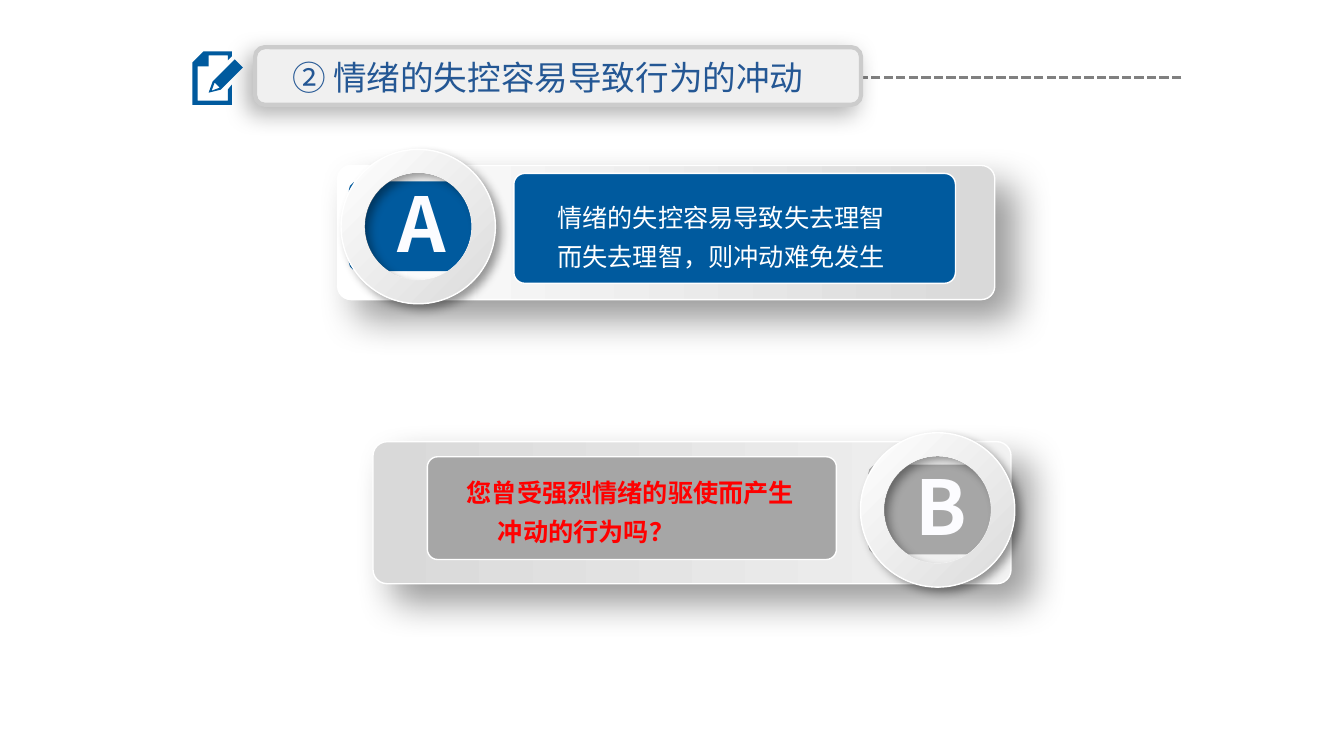
from lxml.etree import SubElement
from pptx import Presentation
from pptx.dml.color import RGBColor
from pptx.enum.dml import MSO_LINE
from pptx.enum.shapes import MSO_CONNECTOR, MSO_SHAPE as SHAPE
from pptx.enum.text import MSO_ANCHOR, MSO_AUTO_SIZE, PP_ALIGN as ALIGN
from pptx.oxml.ns import qn
from pptx.util import Cm, Pt

FONT = "Noto Sans CJK SC"
BLUE, GREY, WHITE = "005A9E", "A6A6A6", "FFFFFF"
HEADER_SHADOW, PANEL_SHADOW, RING_SHADOW = (30, 16, 7, 135), (40, 27, 19, 45), (40, 7, 5, 45)
RING, HOLE = 3.89, 2.72
UNIT = Cm(0.0254)


def rgb(value):
    return RGBColor.from_string(value)


class Deck:
    """Hold the slide and draw its styled elements, with lengths in centimetres."""

    def __init__(self, prs):
        self.s = prs.slides.add_slide(prs.slide_layouts[5])
        self.shapes = self.s.shapes

    def style(self, sp, fill=None, line=None, width=1, shadow=None, angle=0):
        if fill is None:
            sp.fill.background()
        elif isinstance(fill, str):
            sp.fill.solid()
            sp.fill.fore_color.rgb = rgb(fill)
        else:
            sp.fill.gradient()
            sp.fill.gradient_angle = (360 - angle) % 360
            for stop, color in zip(sp.fill.gradient_stops, fill):
                stop.color.rgb = rgb(color)
        if line:
            sp.line.color.rgb = rgb(line)
            sp.line.width = Pt(width)
        else:
            sp.line.fill.background()
        sp.shadow.inherit = False
        if shadow:
            alpha, blur, dist, direction = shadow
            effects = sp._element.spPr.find(qn("a:effectLst"))
            outer = SubElement(effects, qn("a:outerShdw"), blurRad=str(Pt(blur)), dist=str(Pt(dist)),
                               dir=str(direction * 60000), algn="ctr", rotWithShape="0")
            color = SubElement(outer, qn("a:srgbClr"), val="000000")
            SubElement(color, qn("a:alpha"), val=str(alpha * 1000))

    def shape(self, kind, box, adj=None, **style):
        sp = self.shapes.add_shape(kind, *map(Cm, box))
        if adj is not None:
            sp.adjustments[0] = adj
        self.style(sp, **style)

    def circle(self, kind, cx, cy, size, **style):
        self.shape(kind, (cx - size / 2, cy - size / 2, size, size), **style)

    def dashes(self, x1, x2, y):
        line = self.shapes.add_connector(MSO_CONNECTOR.STRAIGHT, Cm(x1), Cm(y), Cm(x2), Cm(y))
        line.line.color.rgb = rgb("808080")
        line.line.width = Pt(2.25)
        line.line.dash_style = MSO_LINE.SQUARE_DOT
        SubElement(line._element.spPr, qn("a:effectLst"))

    def outline(self, *contours):
        start = contours[0][0]
        builder = self.shapes.build_freeform(*start, scale=UNIT)
        for i, points in enumerate(contours):
            if i:
                builder.move_to(*points[0])
            builder.add_line_segments(points[1:], close=True)
        self.style(builder.convert_to_shape(), fill=BLUE)

    def set_text(self, sp, lines, size, color, bold=False, align=ALIGN.LEFT, wrap=True,
                 spacing=1.0, before=0, hanging=0, inset=0.18):
        tf = sp.text_frame
        tf.word_wrap = wrap
        tf.auto_size = MSO_AUTO_SIZE.NONE
        tf.vertical_anchor = MSO_ANCHOR.TOP
        tf.margin_left = tf.margin_right = Cm(inset)
        tf.margin_top = tf.margin_bottom = Cm(inset / 2)
        for i, line in enumerate(lines):
            p = tf.add_paragraph() if i else tf.paragraphs[0]
            p.text = line
            p.alignment = align
            p.line_spacing = spacing
            p.space_before = Pt(before)
            p.font.name, p.font.size, p.font.bold = FONT, Pt(size), bold
            p.font.color.rgb = rgb(color)
            pPr = p._p.get_or_add_pPr()
            SubElement(pPr.find(qn("a:defRPr")), qn("a:ea"), typeface=FONT)
            if hanging:
                pPr.set("marL", str(Cm(hanging)))
                pPr.set("indent", str(-Cm(hanging)))

    def text(self, box, lines, size, color, **style):
        self.set_text(self.shapes.add_textbox(*map(Cm, box)), lines, size, color, **style)

    def title(self, box, text, size, color):
        sp = self.shapes.title
        sp.left, sp.top, sp.width, sp.height = map(Cm, box)
        self.set_text(sp, [text], size, color, align=ALIGN.RIGHT, inset=0.25)
        self.shapes._spTree.append(sp._element)

    def panel(self, box, gradient):
        self.shape(SHAPE.ROUNDED_RECTANGLE, box, adj=0.1, fill=gradient, line=WHITE, shadow=PANEL_SHADOW)

    def badge(self, letter, cx, cy, color):
        self.shape(SHAPE.ROUNDED_RECTANGLE, (cx - 1.75, cy - 1.14, 3.38, 2.26), adj=0.1, fill=color)
        self.circle(SHAPE.OVAL, cx, cy, HOLE, line=WHITE)
        self.circle(SHAPE.DONUT, cx, cy, RING, adj=(RING - HOLE) / 2 / RING,
                    fill=(WHITE, "DBDBDB"), angle=45, shadow=RING_SHADOW)
        self.circle(SHAPE.OVAL, cx, cy, RING, line=WHITE)
        self.text((cx - 0.89, cy - 1.34, 1.96, 2.57), [letter], 54, "FCFCFF",
                  bold=True, align=ALIGN.CENTER, wrap=False)

    def card(self, box, color):
        self.shape(SHAPE.ROUNDED_RECTANGLE, box, adj=0.1, fill=color, line=WHITE)


def main():
    prs = Presentation()
    prs.slide_width, prs.slide_height = Cm(33.87), Cm(19.05)
    deck = Deck(prs)

    deck.dashes(29.77, 12.47, 1.96)
    deck.shape(SHAPE.ROUNDED_RECTANGLE, (6.43, 1.19, 15.27, 1.45), fill=("F0F0F0", "F1F1F1"),
               angle=45, line="CCCCCC", width=3, shadow=HEADER_SHADOW)
    deck.title((5.82, 1.32, 14.68, 1.3), "② 情绪的失控容易导致行为的冲动", 24, "245794")
    deck.outline([(226, 100), (196, 100), (196, 66), (207, 66), (207, 55), (226, 55), (226, 60),
                  (230, 56), (230, 51), (202, 51), (191, 62), (191, 104), (230, 104), (230, 84), (226, 89)])
    deck.outline([(211, 81), (207, 92), (219, 89), (241, 67), (233, 59)],
                 [(218, 87), (210, 90), (213, 82)])

    deck.panel((8.51, 4.17, 16.56, 3.38), (WHITE, "D9D9D9"))
    deck.badge("A", 10.54, 5.71, BLUE)
    deck.card((12.95, 4.37, 11.13, 2.77), BLUE)
    deck.text((13.36, 4.78, 9.12, 2.08), ["情绪的失控容易导致失去理智", "而失去理智，则冲动难免发生"],
              18, WHITE, align=ALIGN.RIGHT, spacing=1.3)

    deck.panel((9.4, 11.13, 16.08, 3.58), ("D9D9D9", "F2F2F2"))
    deck.badge("B", 23.63, 12.85, GREY)
    deck.card((10.77, 11.51, 10.31, 2.59), GREY)
    deck.text((11.58, 11.71, 9.12, 2.18), ["您曾受强烈情绪的驱使而产生冲动的行为吗？"],
              18, "FF0000", bold=True, spacing=1.3, before=6, hanging=0.79)

    prs.save("out.pptx")


if __name__ == "__main__":
    main()
